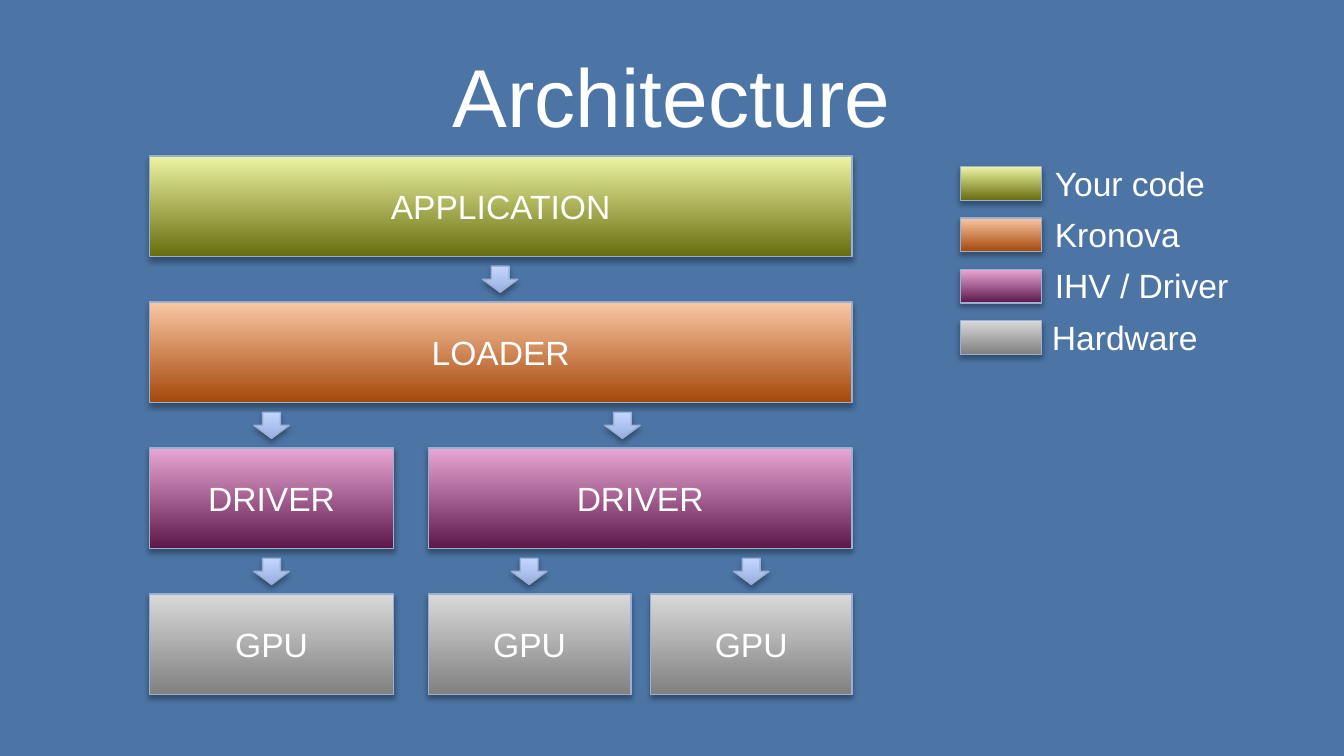
import pptx
import pptx.util
import pptx.dml.color
import pptx.enum.shapes
import pptx.enum.text
import pptx.oxml
import pptx.oxml.ns

Pt = pptx.util.Pt
RGB = pptx.dml.color.RGBColor.from_string
SHAPE = pptx.enum.shapes.MSO_SHAPE
ALIGN = pptx.enum.text.PP_ALIGN
ANCHOR = pptx.enum.text.MSO_ANCHOR

# Content
TITLE = "Architecture"
# Each row: (text, kind, left, width, centre of the arrow above or None)
ROWS = [
    [("APPLICATION", "code", 80, 376.5, None)],
    [("LOADER", "loader", 80, 376.5, 268)],
    [("DRIVER", "driver", 80, 131, 145.5),
     ("DRIVER", "driver", 229.5, 227, 333.5)],
    [("GPU", "hardware", 80, 131, 145.5),
     ("GPU", "hardware", 229.5, 108.5, 283.5),
     ("GPU", "hardware", 348.5, 108, 402.5)],
]
# Each entry: (text, kind, left of the label)
LEGEND = [
    ("Your code", "code", 558),
    ("Kronova", "loader", 558),
    ("IHV / Driver", "driver", 558),
    ("Hardware", "hardware", 556.5),
]

COLORS = {"background": "4C75A5", "text": "FFFFFF", "line": "9BAFD5", "shadow": "000000"}
# Bottom and top colour of each gradient
GRADIENTS = {
    "code": ("676E0E", "EDF3A2"),
    "loader": ("A5480A", "FAC7A4"),
    "driver": ("5B1748", "E9A7D6"),
    "hardware": ("808080", "D9D9D9"),
    "arrow": ("98B0E0", "C4D6FF"),
}

# Layout in points
ROW_TOP, ROW_STEP, BOX_H = 83.5, 78.25, 54
ARROW_W, ARROW_H = 19, 14
SWATCH_LEFT, SWATCH_TOP, SWATCH_W, SWATCH_H = 514.5, 89.3, 43.5, 18
LABEL_TOP, LEGEND_STEP = 83.5, 27.5


def write(sp, text, size=18, align=ALIGN.CENTER, anchor=ANCHOR.MIDDLE, wrap=True):
    tf = sp.text_frame
    tf.word_wrap = wrap
    tf.vertical_anchor = anchor
    p = tf.paragraphs[0]
    p.alignment = align
    r = p.add_run()
    r.text = text
    r.font.name = "Arial"
    r.font.size = Pt(size)
    r.font.color.rgb = RGB(COLORS["text"])


def add_shadow(sp):
    sp.shadow.inherit = False
    effects = sp._element.spPr.find(pptx.oxml.ns.qn("a:effectLst"))
    effects.append(pptx.oxml.parse_xml(
        f'<a:outerShdw {pptx.oxml.ns.nsdecls("a")} blurRad="{Pt(3.1)}" dist="{Pt(1.8)}" '
        f'dir="5400000" rotWithShape="0"><a:srgbClr val="{COLORS["shadow"]}">'
        '<a:alpha val="35000"/></a:srgbClr></a:outerShdw>'))


def add_block(s, shape, kind, left, top, width, height):
    sp = s.shapes.add_shape(shape, Pt(left), Pt(top), Pt(width), Pt(height))
    sp.fill.gradient()
    sp.fill.gradient_angle = 90
    for stop, color in zip(sp.fill.gradient_stops, GRADIENTS[kind]):
        stop.color.rgb = RGB(color)
    sp.line.color.rgb = RGB(COLORS["line"])
    sp.line.width = Pt(0.75)
    add_shadow(sp)
    return sp


def main():
    prs = pptx.Presentation()
    prs.slide_width, prs.slide_height = Pt(720), Pt(405)
    s = prs.slides.add_slide(prs.slide_layouts[6])
    s.background.fill.solid()
    s.background.fill.fore_color.rgb = RGB(COLORS["background"])

    # Title
    sp = s.shapes.add_textbox(Pt(36), Pt(16.5), Pt(648), Pt(68))
    write(sp, TITLE, size=44)

    # Layers, with an arrow centred in the gap above each box
    gap = ROW_STEP - BOX_H
    for i, row in enumerate(ROWS):
        top = ROW_TOP + i * ROW_STEP
        for text, kind, left, width, arrow_x in row:
            write(add_block(s, SHAPE.RECTANGLE, kind, left, top, width, BOX_H), text)
            if arrow_x is not None:
                add_block(s, SHAPE.DOWN_ARROW, "arrow", arrow_x - ARROW_W / 2,
                          top - (gap + ARROW_H) / 2, ARROW_W, ARROW_H)

    # Legend
    for i, (text, kind, left) in enumerate(LEGEND):
        dy = i * LEGEND_STEP
        add_block(s, SHAPE.RECTANGLE, kind, SWATCH_LEFT, SWATCH_TOP + dy, SWATCH_W, SWATCH_H)
        sp = s.shapes.add_textbox(Pt(left), Pt(LABEL_TOP + dy), Pt(108), Pt(29))
        write(sp, text, align=ALIGN.LEFT, anchor=ANCHOR.TOP)

    prs.save("out.pptx")


if __name__ == "__main__":
    main()
